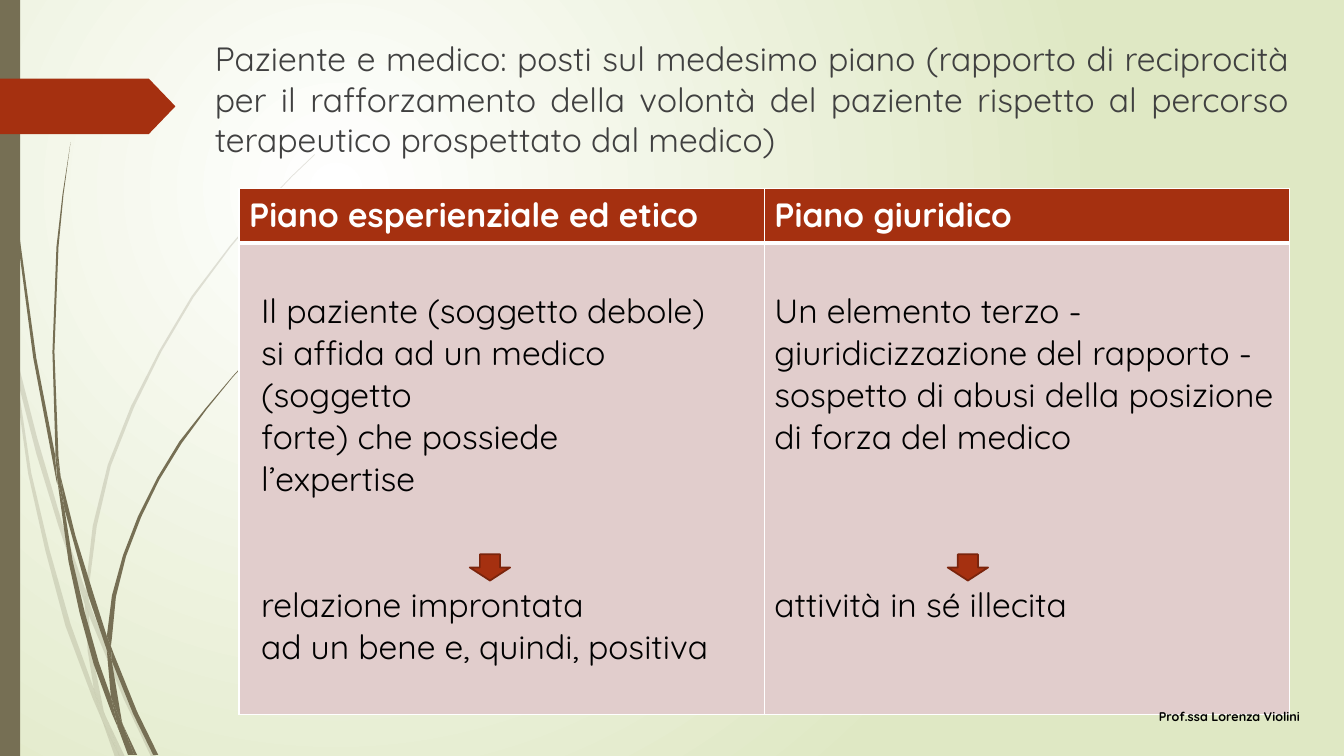
from dataclasses import dataclass

from lxml.etree import SubElement
from pptx import Presentation
from pptx.dml.color import RGBColor
from pptx.enum.shapes import MSO_SHAPE
from pptx.enum.text import MSO_ANCHOR, MSO_AUTO_SIZE, PP_ALIGN
from pptx.oxml.ns import qn
from pptx.util import Inches, Pt


@dataclass(frozen=True)
class Theme:
    font: str = "Quicksand"
    text_size: int = 24
    credit_size: int = 9
    line_height: int = 30
    olive: str = "766F54"
    red: str = "A53010"
    dark_red: str = "7A240C"
    rose: str = "E1CDCC"
    white: str = "FFFFFF"
    black: str = "000000"
    grey: str = "404040"
    pale_green: str = "DFE8C4"


THEME = Theme()

HEADING = (
    "Paziente e medico: posti sul medesimo piano (rapporto di reciprocità per il "
    "rafforzamento della volontà del paziente rispetto al percorso terapeutico "
    "prospettato dal medico)"
)
CREDIT = "Prof.ssa Lorenza Violini"

# fmt: off
PLANES = [
    {
        "header": "Piano esperienziale ed etico",
        "premise": ["Il paziente (soggetto debole)", "si affida ad un medico (soggetto",
                    "forte) che possiede", "l’expertise"],
        "outcome": ["relazione improntata", "ad un bene e, quindi, positiva"],
        "gap_lines": 2, "indent": 0.12, "arrow_left": 4.66,
    },
    {
        "header": "Piano giuridico",
        "premise": ["Un elemento terzo - giuridicizzazione del rapporto - "
                    "sospetto di abusi della posizione di forza del medico"],
        "outcome": ["attività in sé illecita"],
        "gap_lines": 3, "indent": 0, "arrow_left": 9.4,
    },
]

FAINT_BLADES = [
    [(0.11, 3.5), (0.09, 3.22), (0, 2.82), (0, 2.99), (0.1, 3.44)],
    [(0.58, 5.22), (0.84, 5.99), (0.85, 5.86), (0.62, 5.2), (0.37, 4.35), (0.14, 3.45),
     (0.17, 3.76), (0.36, 4.5)],
    [(0.92, 6.07), (0.88, 5.96), (0.88, 6.1), (1.23, 6.94), (1.5, 7.51), (1.55, 7.51),
     (1.27, 6.92)],
    [(1.19, 7.51), (1.24, 7.51), (1.05, 7.11)],
    [(0.93, 6.83), (0.7, 6.19), (0.49, 5.45), (0.31, 4.69), (0.17, 3.76), (0.11, 3.5),
     (0.28, 4.7), (0.45, 5.46), (0.65, 6.21), (0.92, 6.93), (1.01, 7.14), (0.99, 7.07)],
    [(0.84, 5.99), (0.87, 6.46), (0.93, 6.83), (0.96, 6.92), (1.05, 7.11), (1.03, 7.06),
     (0.91, 6.46), (0.88, 6.1), (0.88, 6.08)],
    [(0.88, 5.84), (0.96, 5.22), (1.1, 4.62), (1.33, 4.04), (1.6, 3.49), (1.92, 2.95),
     (2.29, 2.45), (2.68, 1.98), (2.9, 1.75), (3.12, 1.54), (3.12, 1.53), (2.89, 1.75),
     (2.68, 1.97), (2.28, 2.44), (1.9, 2.94), (1.58, 3.48), (1.3, 4.03), (1.07, 4.61),
     (0.92, 5.22), (0.85, 5.84), (0.85, 5.86), (0.88, 5.96)],
    [(1.01, 7.14), (1.14, 7.51), (1.19, 7.51)],
    [(0.88, 6.08), (0.88, 6.1), (0.88, 5.96), (0.85, 5.86), (0.84, 5.99)],
    [(0.96, 6.92), (0.93, 6.83), (0.99, 7.07), (1.01, 7.14), (1.19, 7.51), (1.05, 7.11)],
]
DARK_BLADES = [
    [(0.07, 1.1), (0.17, 2.33), (0.33, 3.55), (0.56, 4.77), (0.57, 4.81), (0.55, 4.57),
     (0.55, 4.53), (0.36, 3.55), (0.19, 2.32), (0.08, 1.09), (0.05, 0.48), (0.04, 0),
     (0.03, 0), (0.04, 0.48)],
    [(0.88, 5.92), (1.06, 6.45), (1.06, 6.33), (1.06, 6.31), (0.93, 5.9), (0.75, 5.32),
     (0.6, 4.72), (0.64, 5.05)],
    [(1.13, 6.49), (1.1, 6.41), (1.11, 6.56), (1.32, 7.08), (1.52, 7.49), (1.57, 7.49),
     (1.36, 7.06)],
    [(1.1, 6.91), (0.98, 6.57), (0.84, 6.07), (0.72, 5.56), (0.64, 5.05), (0.57, 4.77),
     (0.68, 5.57), (0.79, 6.08), (0.93, 6.59), (1.11, 7.08), (1.17, 7.22), (1.16, 7.17)],
    [(0.6, 4.72), (0.58, 4.53), (0.54, 3.49), (0.58, 2.45), (0.63, 1.93), (0.7, 1.41),
     (0.62, 1.93), (0.56, 2.45), (0.52, 3.49), (0.55, 4.49)],
    [(1.33, 7.49), (1.36, 7.49), (1.22, 7.19)],
    [(0.57, 4.77), (0.64, 5.05), (0.6, 4.72), (0.55, 4.49), (0.55, 4.53)],
    [(1.11, 6.33), (1.15, 5.92), (1.25, 5.52), (1.4, 5.13), (1.58, 4.76), (1.8, 4.4),
     (2.05, 4.06), (2.31, 3.74), (2.45, 3.59), (2.61, 3.44), (2.6, 3.44), (2.45, 3.58),
     (2.31, 3.73), (2.04, 4.05), (1.78, 4.38), (1.56, 4.74), (1.37, 5.12), (1.22, 5.51),
     (1.11, 5.91), (1.06, 6.31), (1.1, 6.41)],
    [(1.17, 7.22), (1.27, 7.49), (1.31, 7.49)],
    [(1.06, 6.45), (1.1, 6.91), (1.16, 7.06), (1.22, 7.19), (1.21, 7.16), (1.11, 6.56),
     (1.09, 6.51)],
    [(1.06, 6.45), (1.09, 6.51), (1.11, 6.56), (1.1, 6.41), (1.06, 6.31), (1.06, 6.33)],
    [(1.16, 7.06), (1.1, 6.91), (1.16, 7.17), (1.17, 7.22), (1.3, 7.49), (1.33, 7.49),
     (1.22, 7.19)],
]
# fmt: on


def rgb(color):
    return RGBColor.from_string(color)


def box(left, top, width, height):
    return tuple(Inches(n) for n in (left, top, width, height))


def place(part, *bounds):
    part.left, part.top, part.width, part.height = box(*bounds)


def paint(part, color, outline=None):
    part.shadow.inherit = False
    part.fill.solid()
    part.fill.fore_color.rgb = rgb(color)
    if outline:
        part.line.color.rgb = rgb(outline)
        part.line.width = Pt(1.25)
    else:
        part.line.fill.background()


def write(paragraph, text, color, size=THEME.text_size, bold=False):
    run = paragraph.add_run()
    run.text = text
    run.font.name, run.font.size, run.font.bold = THEME.font, Pt(size), bold
    run.font.color.rgb = rgb(color)


def add_blade(shapes, points, opacity):
    outline = [(Inches(x), Inches(y)) for x, y in points]
    builder = shapes.build_freeform(*outline[0], scale=1.0)
    builder.add_line_segments(outline[1:], close=True)
    blade = builder.convert_to_shape()
    paint(blade, THEME.olive)
    if opacity < 100:
        tint = blade.element.spPr.find(qn("a:solidFill"))[0]
        SubElement(tint, qn("a:alpha"), val=str(opacity * 1000))


def set_background(slide):
    fill = slide.background.fill
    fill.gradient()
    for stop, color in zip(fill.gradient_stops, (THEME.white, THEME.pale_green)):
        stop.color.rgb = rgb(color)
    gradient = slide.element.find(".//" + qn("a:gradFill"))
    gradient.remove(gradient.find(qn("a:lin")))
    glow = SubElement(gradient, qn("a:path"), path="circle")
    SubElement(glow, qn("a:fillToRect"), l="50000", t="50000", r="100000", b="100000")


def style_cell(cell, color, bottom_width):
    properties = cell._tc.get_or_add_tcPr()
    for side, width in (("L", 1), ("R", 1), ("T", 1), ("B", bottom_width)):
        border = SubElement(properties, qn("a:ln" + side), w=str(Pt(width)))
        SubElement(SubElement(border, qn("a:solidFill")), qn("a:srgbClr"), val=THEME.white)
    cell.fill.solid()
    cell.fill.fore_color.rgb = rgb(color)


def add_planes(shapes):
    table = shapes.add_table(2, len(PLANES), *box(2.37, 1.87, 10.42, 5.22)).table
    table.rows[0].height, table.rows[1].height = Inches(0.54), Inches(4.68)
    for column, plane in enumerate(PLANES):
        header, body = table.cell(0, column), table.cell(1, column)
        style_cell(header, THEME.red, 3)
        write(header.text_frame.paragraphs[0], plane["header"], THEME.white, bold=True)
        style_cell(body, THEME.rose, 1)
        body.margin_left = Inches(0.1 + plane["indent"])
        body.margin_top = Inches(0.05) + Pt(THEME.line_height)
        for index, line in enumerate(plane["premise"] + plane["outcome"]):
            frame = body.text_frame
            paragraph = frame.add_paragraph() if index else frame.paragraphs[0]
            if index == len(plane["premise"]):
                paragraph.space_before = Pt(plane["gap_lines"] * THEME.line_height)
            write(paragraph, line, THEME.black)
        arrow = shapes.add_shape(MSO_SHAPE.DOWN_ARROW, *box(plane["arrow_left"], 5.5, 0.4, 0.26))
        paint(arrow, THEME.red, THEME.dark_red)


def main():
    deck = Presentation()
    deck.slide_width, deck.slide_height = Inches(13.33), Inches(7.5)
    slide = deck.slides.add_slide(deck.slide_layouts[5])
    shapes = slide.shapes
    set_background(slide)

    for blades, opacity in ((FAINT_BLADES, 20), (DARK_BLADES, 100)):
        for points in blades:
            add_blade(shapes, points, opacity)
    paint(shapes.add_shape(MSO_SHAPE.RECTANGLE, *box(0, 0, 0.2, 7.5)), THEME.olive)
    tag = shapes.add_shape(MSO_SHAPE.PENTAGON, *box(0, 0.78, 1.74, 0.55))
    tag.adjustments[0] = 0.48
    paint(tag, THEME.red)

    heading = shapes.title
    place(heading, 2.03, 0.33, 10.85, 4.43)
    frame = heading.text_frame
    frame.word_wrap, frame.auto_size = True, MSO_AUTO_SIZE.NONE
    frame.vertical_anchor = MSO_ANCHOR.TOP
    paragraph = frame.paragraphs[0]
    paragraph.alignment, paragraph.line_spacing = PP_ALIGN.JUSTIFY, 1.0
    write(paragraph, HEADING, THEME.grey)

    add_planes(shapes)

    credit = shapes.add_textbox(*box(4.66, 6.91, 8.33, 0.4)).text_frame
    credit.word_wrap, credit.vertical_anchor = True, MSO_ANCHOR.MIDDLE
    credit.paragraphs[0].alignment = PP_ALIGN.RIGHT
    write(credit.paragraphs[0], CREDIT, THEME.black, THEME.credit_size, bold=True)

    deck.save("out.pptx")


if __name__ == "__main__":
    main()
